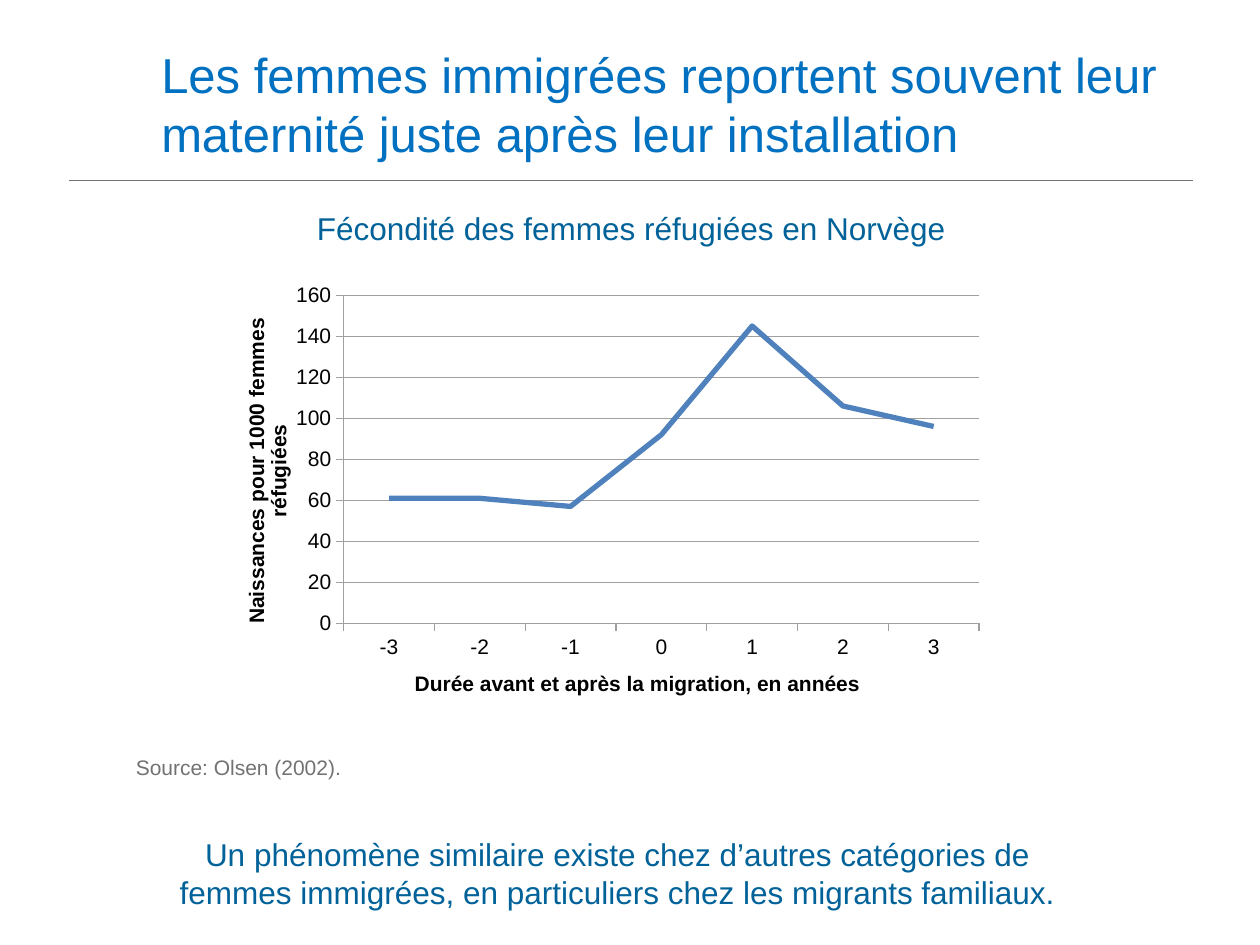
import pptx
import pptx.chart.data
import pptx.dml.color
import pptx.enum.chart
import pptx.enum.shapes
import pptx.enum.text
import pptx.oxml
import pptx.oxml.ns
import pptx.util
from pptx.util import Inches

THEME = {
    "font": "Arial",
    "title": "0070C0", "accent": "006299", "muted": "727272",
    "text": "000000", "series": "4F81BD", "grid": "A0A0A0",
    "title_size": 28, "body_size": 18, "small_size": 12,
}
ALIGN = pptx.enum.text.PP_ALIGN
ANCHOR = pptx.enum.text.MSO_ANCHOR

TITLE = "Les femmes immigrées reportent souvent leur maternité juste après leur installation"
TEXTS = [
    ("Fécondité des femmes réfugiées en Norvège",
     (0.58, 1.61, 8.86, 0.4), "body_size", "accent", ALIGN.CENTER),
    ("Source: Olsen (2002).",
     (0.98, 5.94, 6.93, 0.3), "small_size", "muted", ALIGN.LEFT),
    ("Un phénomène similaire existe chez d’autres catégories de femmes immigrées, "
     "en particuliers chez les migrants familiaux.",
     (1.18, 6.58, 7.44, 0.71), "body_size", "accent", ALIGN.CENTER),
]
YEARS = ["-3", "-2", "-1", "0", "1", "2", "3"]
BIRTHS = [61, 61, 57, 92, 145, 106, 96]
YEAR_TITLE = "Durée avant et après la migration, en années"
BIRTH_TITLE = "Naissances pour 1000 femmes réfugiées"
CHART_PLACE = (1.9, 2.25, 6.22, 3.46)
PLOT = {"x": 0.133, "y": 0.027, "w": 0.811, "h": 0.753}


def color(name):
    return pptx.dml.color.RGBColor.from_string(THEME[name])


def style_font(font, size, tint, bold=False):
    font.name = THEME["font"]
    font.size = pptx.util.Pt(THEME[size])
    font.bold = bold
    font.color.rgb = color(tint)


def style_line(line, tint, width):
    line.color.rgb = color(tint)
    line.width = pptx.util.Pt(width)


def write_text(frame, text, size, tint, align=ALIGN.LEFT, anchor=ANCHOR.TOP, bold=False):
    frame.word_wrap = True
    frame.auto_size = pptx.enum.text.MSO_AUTO_SIZE.NONE
    frame.vertical_anchor = anchor
    para = frame.paragraphs[0]
    para.alignment = align
    span = para.add_run()
    span.text = text
    style_font(span.font, size, tint, bold)


def add_title(page):
    title = page.shapes.title
    title.left, title.top, title.width, title.height = map(Inches, (1.18, 0.26, 8.47, 1.12))
    write_text(title.text_frame, TITLE, "title_size", "title", anchor=ANCHOR.MIDDLE)


def add_rule(page):
    rule = page.shapes.add_connector(
        pptx.enum.shapes.MSO_CONNECTOR.STRAIGHT,
        Inches(0.55), Inches(1.43), Inches(9.47), Inches(1.43))
    style_line(rule.line, "muted", 0.5)
    pptx.oxml.ns.qn("a:effectLst")
    rule._element.spPr.append(
        pptx.oxml.parse_xml("<a:effectLst %s/>" % pptx.oxml.ns.nsdecls("a")))


def place_plot(chart):
    sizes = "".join(f'<c:{key} val="{value}"/>' for key, value in PLOT.items())
    layout = pptx.oxml.parse_xml(
        f'<c:layout {pptx.oxml.ns.nsdecls("c")}><c:manualLayout>'
        '<c:layoutTarget val="inner"/><c:xMode val="edge"/><c:yMode val="edge"/>'
        f'{sizes}</c:manualLayout></c:layout>')
    plot_area = chart._chartSpace.chart.plotArea
    for old in plot_area.findall(pptx.oxml.ns.qn("c:layout")):
        plot_area.remove(old)
    plot_area.insert(0, layout)


def add_births_chart(page):
    data = pptx.chart.data.CategoryChartData()
    data.categories = YEARS
    data.add_series("Series 1", BIRTHS)
    chart = page.shapes.add_chart(
        pptx.enum.chart.XL_CHART_TYPE.LINE, *map(Inches, CHART_PLACE), data).chart
    chart.has_legend = False
    chart.has_title = False
    style_font(chart.font, "small_size", "text")
    chart.plots[0].vary_by_categories = False

    for axis, text in ((chart.category_axis, YEAR_TITLE), (chart.value_axis, BIRTH_TITLE)):
        axis.major_tick_mark = pptx.enum.chart.XL_TICK_MARK.OUTSIDE
        axis.minor_tick_mark = pptx.enum.chart.XL_TICK_MARK.NONE
        style_line(axis.format.line, "grid", 0.75)
        para = axis.axis_title.text_frame.paragraphs[0]
        span = para.add_run()
        span.text = text
        style_font(span.font, "small_size", "text", bold=True)

    births = chart.value_axis
    births.minimum_scale, births.maximum_scale, births.major_unit = 0, 160, 20
    births.has_major_gridlines = True
    style_line(births.major_gridlines.format.line, "grid", 0.75)

    series = chart.plots[0].series[0]
    series.smooth = False
    series.marker.style = pptx.enum.chart.XL_MARKER_STYLE.NONE
    style_line(series.format.line, "series", 3)
    place_plot(chart)


def main():
    deck = pptx.Presentation()
    deck.slide_width, deck.slide_height = Inches(10), Inches(7.5)
    page = deck.slides.add_slide(deck.slide_layouts[5])
    add_rule(page)
    add_title(page)
    add_births_chart(page)
    for text, place, size, tint, align in TEXTS:
        box = page.shapes.add_textbox(*map(Inches, place))
        write_text(box.text_frame, text, size, tint, align=align)
    deck.save("out.pptx")


if __name__ == "__main__":
    main()
